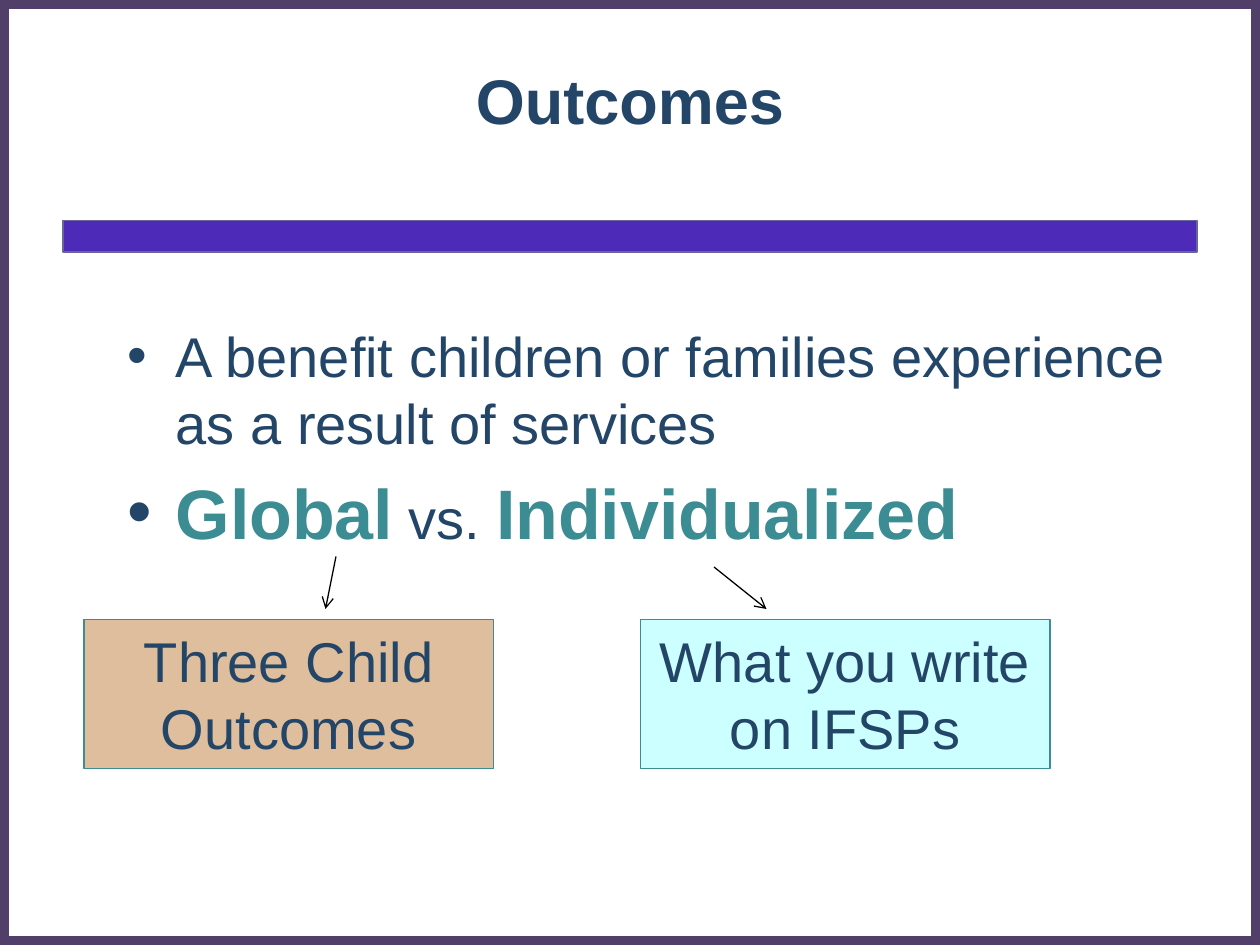
from dataclasses import dataclass

from lxml import etree
from pptx import Presentation
from pptx.dml.color import RGBColor
from pptx.enum.shapes import MSO_CONNECTOR, MSO_SHAPE
from pptx.enum.text import MSO_ANCHOR, MSO_AUTO_SIZE, PP_ALIGN
from pptx.oxml.ns import qn
from pptx.util import Inches, Pt

RECTANGLE = MSO_SHAPE.RECTANGLE
STRAIGHT = MSO_CONNECTOR.STRAIGHT
MIDDLE = MSO_ANCHOR.MIDDLE
CENTER = PP_ALIGN.CENTER
NO_FIT = MSO_AUTO_SIZE.NONE
TITLE_ONLY = 5
COLUMNS, ROWS = 120, 90


@dataclass(frozen=True)
class Theme:
    """Colours, font and type sizes of the slide."""

    font: str = "Arial"
    navy: str = "224568"
    teal: str = "3C8C93"
    frame: str = "523F69"
    band: str = "4E2AB8"
    band_edge: str = "666699"
    tan: str = "DFBE9D"
    aqua: str = "CCFFFF"
    black: str = "000000"
    title_size: int = 36
    text_size: int = 32
    key_size: int = 40
    thin: float = 0.75
    thick: float = 10


class SlideBuilder:
    """Draws styled elements on the current slide by grid columns and rows."""

    def __init__(self, deck, theme):
        """Add a title-only slide and measure its grid."""
        self.theme = theme
        self.page = deck.slides.add_slide(deck.slide_layouts[TITLE_ONLY])
        self.column = deck.slide_width / COLUMNS
        self.row = deck.slide_height / ROWS

    def place(self, *cells):
        """Turn alternating columns and rows into lengths."""
        units = (self.column, self.row) * 2
        return [round(cell * unit) for cell, unit in zip(cells, units)]

    def style(self, font, size=None, color=None, bold=None):
        """Set the theme font with a size, colour and weight."""
        font.name = self.theme.font
        font.size = Pt(size or self.theme.text_size)
        font.color.rgb = RGBColor.from_string(color or self.theme.navy)
        font.bold = bold

    def title(self, text, cells):
        """Move and format the title placeholder."""
        box = self.page.shapes.title
        box.left, box.top, box.width, box.height = self.place(*cells)
        frame = box.text_frame
        frame.text = text
        frame.auto_size = NO_FIT
        frame.vertical_anchor = MIDDLE
        para = frame.paragraphs[0]
        para.alignment = CENTER
        self.style(para.font, self.theme.title_size, bold=True)

    def rectangle(self, cells, edge, weight, fill=None, text=None):
        """Draw a rectangle with an optional fill and centred label."""
        box = self.page.shapes.add_shape(RECTANGLE, *self.place(*cells))
        box.shadow.inherit = False
        box.line.color.rgb = RGBColor.from_string(edge)
        box.line.width = Pt(weight)
        if fill:
            box.fill.solid()
            box.fill.fore_color.rgb = RGBColor.from_string(fill)
        else:
            box.fill.background()
        if text:
            box.text_frame.text = text
            box.text_frame.vertical_anchor = MIDDLE
            para = box.text_frame.paragraphs[0]
            para.alignment = CENTER
            self.style(para.font)

    def bullets(self, items, cells):
        """Write bulleted paragraphs made of plain and key spans."""
        frame = self.page.shapes.add_textbox(*self.place(*cells)).text_frame
        frame.word_wrap = True
        for index, spans in enumerate(items):
            para = frame.add_paragraph() if index else frame.paragraphs[0]
            if index:
                para.space_before = Pt(self.theme.key_size * 0.2)
            self.bullet(para)
            self.style(para.font)
            for text, is_key in spans:
                span = para.add_run()
                span.text = text
                if is_key:
                    self.style(span.font, self.theme.key_size, self.theme.teal, True)

    def bullet(self, para):
        """Give a paragraph a hanging round bullet."""
        props = para._p.get_or_add_pPr()
        indent = Inches(0.38)
        props.set("marL", str(indent))
        props.set("indent", str(-indent))
        color = etree.SubElement(props, qn("a:buClr"))
        etree.SubElement(color, qn("a:srgbClr")).set("val", self.theme.navy)
        etree.SubElement(props, qn("a:buFont")).set("typeface", self.theme.font)
        etree.SubElement(props, qn("a:buChar")).set("char", "•")

    def arrow(self, cells):
        """Draw a thin line with an open arrowhead at its end."""
        line = self.page.shapes.add_connector(STRAIGHT, *self.place(*cells))
        line.line.color.rgb = RGBColor.from_string(self.theme.black)
        line.line.width = Pt(self.theme.thin)
        etree.SubElement(line.line._get_or_add_ln(), qn("a:tailEnd")).set("type", "arrow")
        etree.SubElement(line._element.spPr, qn("a:effectLst"))


def main():
    """Build and save the outcomes slide."""
    deck = Presentation()
    deck.slide_width, deck.slide_height = Inches(10), Inches(7.5)
    theme = Theme()
    slide = SlideBuilder(deck, theme)
    slide.rectangle((0, 0, COLUMNS, ROWS), theme.frame, theme.thick)
    slide.rectangle((6, 21, 108, 3), theme.band_edge, theme.thin, theme.band)
    slide.title("Outcomes", (7, 2, 106, 15))
    slide.bullets(
        [
            [("A benefit children or families experience as a result of services", False)],
            [("Global", True), (" vs. ", False), ("Individualized", True)],
        ],
        (11, 30, 102, 55),
    )
    outcomes = [
        (8, theme.tan, "Three Child Outcomes", (32, 53, 31, 58)),
        (61, theme.aqua, "What you write on IFSPs", (68, 54, 73, 58)),
    ]
    for left, fill, text, arrow in outcomes:
        slide.rectangle((left, 59, 39, 14.2), theme.teal, theme.thin, fill, text)
        slide.arrow(arrow)
    deck.save("out.pptx")


if __name__ == "__main__":
    main()
